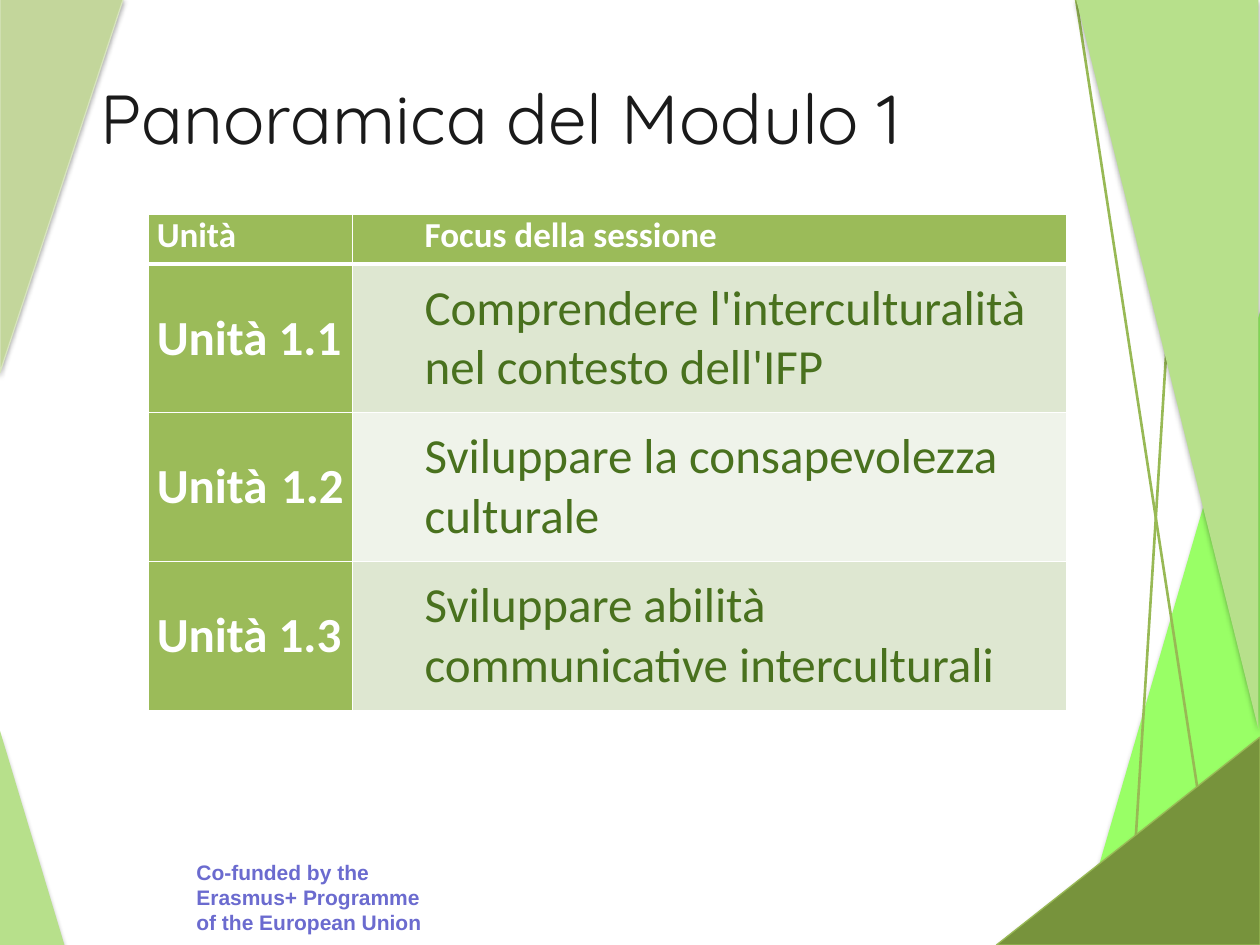
import pptx
import pptx.dml.color
import pptx.enum.shapes
import pptx.enum.text
import pptx.oxml
import pptx.oxml.ns
import pptx.util
from pptx.util import Cm

GREEN, PALE_GREEN, LINE_GREEN = "9BBB59", "B7E08B", "98B955"
WHITE, DARK_GREEN = "FFFFFF", "49711E"
NAMESPACE = pptx.oxml.ns.nsdecls("a")
ANCHOR = pptx.enum.text.MSO_ANCHOR
ALIGN = pptx.enum.text.PP_ALIGN

UNITS = [
    ("Unità 1.1", "Comprendere l'interculturalità nel contesto dell'IFP", "DEE7D1"),
    ("Unità 1.2 ", "Sviluppare la consapevolezza culturale", "EFF3EA"),
    ("Unità 1.3", "Sviluppare abilità communicative interculturali", "DEE7D1"),
]


def rgb(hex_colour):
    return pptx.dml.color.RGBColor.from_string(hex_colour)


def add_run(paragraph, text, font_name, size, colour, bold=False):
    run = paragraph.add_run()
    run.text = text
    run.font.name = font_name
    run.font.size = pptx.util.Pt(size)
    run.font.color.rgb = rgb(colour)
    run.font.bold = bold


def add_triangle(slide, left, top, width, height, colour, flips="", outline=None):
    """Add a shadowed right triangle; flips may hold h and v."""
    kind = pptx.enum.shapes.MSO_SHAPE.RIGHT_TRIANGLE
    triangle = slide.shapes.add_shape(kind, Cm(left), Cm(top), Cm(width), Cm(height))
    for flip in flips:
        triangle._element.spPr.xfrm.set("flip" + flip.upper(), "1")
    triangle.fill.solid()
    triangle.fill.fore_color.rgb = rgb(colour)
    if outline:
        triangle.line.color.rgb = rgb(outline)
        triangle.line.width = pptx.util.Pt(0.75)
    else:
        triangle.line.fill.background()
    triangle.shadow.inherit = False
    effects = triangle._element.spPr.find(pptx.oxml.ns.qn("a:effectLst"))
    effects.append(pptx.oxml.parse_xml(
        f'<a:outerShdw {NAMESPACE} blurRad="39370" dist="22860" dir="5400000" '
        'rotWithShape="0"><a:srgbClr val="000000"><a:alpha val="35000"/>'
        '</a:srgbClr></a:outerShdw>'))


def add_line(slide, *ends):
    line = slide.shapes.add_connector(
        pptx.enum.shapes.MSO_CONNECTOR.STRAIGHT, *map(Cm, ends))
    line.line.color.rgb = rgb(LINE_GREEN)
    line.line.width = pptx.util.Pt(1.5)
    line._element.spPr.append(pptx.oxml.parse_xml(f"<a:effectLst {NAMESPACE}/>"))


def add_decoration(slide):
    add_triangle(slide, 21.69, 6.12, 3.76, 12.93, "99FF66", "h")
    add_triangle(slide, 0, 14.73, 1.3, 4.32, PALE_GREEN)
    add_triangle(slide, 0, -0.03, 2.49, 7.54, "C3D69B", "v", "D7E4BD")
    add_line(slide, 22.76, 19.05, 23.62, 5.33)
    add_line(slide, 24.51, 18.31, 21.69, -0.03)
    add_triangle(slide, 21.69, -0.03, 3.68, 14.73, PALE_GREEN, "hv")
    add_triangle(slide, 20.09, 14.86, 5.31, 4.19, "77933C", "h", LINE_GREEN)


def add_funding_note(slide):
    note = slide.shapes.add_textbox(Cm(3.71), Cm(17.2), Cm(5.08), Cm(1.8))
    note.text_frame.word_wrap = True
    add_run(note.text_frame.paragraphs[0],
            "Co-funded by the Erasmus+ Programme of the European Union",
            "Arial", 12, "6B6BCF", True)


def format_title(slide, text):
    title = slide.shapes.title
    title.left, title.top, title.width, title.height = map(Cm, (1.5, 0.76, 17.2, 3.18))
    title.text_frame.vertical_anchor = ANCHOR.MIDDLE
    paragraph = title.text_frame.paragraphs[0]
    paragraph.alignment = ALIGN.CENTER
    add_run(paragraph, text, "Quicksand", 39.6, "1A1A1A")
    slide.shapes._spTree.append(title._element)  # in front of the decoration


def set_borders(cell, bottom_width):
    widths = {"lnL": 1, "lnR": 1, "lnT": 1, "lnB": bottom_width}
    for position, (side, width) in enumerate(widths.items()):
        cell._tc.get_or_add_tcPr().insert(position, pptx.oxml.parse_xml(
            f'<a:{side} {NAMESPACE} w="{pptx.util.Pt(width)}"><a:solidFill>'
            f'<a:srgbClr val="{WHITE}"/></a:solidFill></a:{side}>'))


def fill_cell(cell, text, fill, size, colour=WHITE, bold=True, indented=False,
              anchor=ANCHOR.MIDDLE, bottom_width=1):
    cell.margin_left = cell.margin_right = Cm(0.18)
    cell.margin_top = cell.margin_bottom = 0
    cell.vertical_anchor = anchor
    cell.fill.solid()
    cell.fill.fore_color.rgb = rgb(fill)
    set_borders(cell, bottom_width)
    paragraph = cell.text_frame.paragraphs[0]
    if indented:
        paragraph._p.get_or_add_pPr().set("marL", str(Cm(1.27)))
    else:
        paragraph.alignment = ALIGN.JUSTIFY
    add_run(paragraph, text, "Calibri", size, colour, bold)


def add_units_table(slide):
    table = slide.shapes.add_table(
        len(UNITS) + 1, 2, Cm(2.98), Cm(4.32), Cm(18.52), Cm(10)).table
    table.columns[0].width, table.columns[1].width = Cm(4.13), Cm(14.39)
    for row in table.rows:
        row.height = Cm(3)
    table.rows[0].height = Cm(1)
    for column, heading in enumerate(("Unità", "Focus della sessione")):
        fill_cell(table.cell(0, column), heading, GREEN, 20, indented=column == 1,
                  anchor=ANCHOR.TOP, bottom_width=3)
    for row, (unit, focus, fill) in enumerate(UNITS, start=1):
        fill_cell(table.cell(row, 0), unit, GREEN, 28)
        fill_cell(table.cell(row, 1), focus, fill, 28, DARK_GREEN, False, True)


def main():
    presentation = pptx.Presentation()
    presentation.slide_width, presentation.slide_height = Cm(25.4), Cm(19.05)
    slide = presentation.slides.add_slide(presentation.slide_layouts[5])
    add_decoration(slide)
    add_funding_note(slide)
    format_title(slide, "Panoramica del Modulo 1")
    add_units_table(slide)
    presentation.save("out.pptx")


if __name__ == "__main__":
    main()
